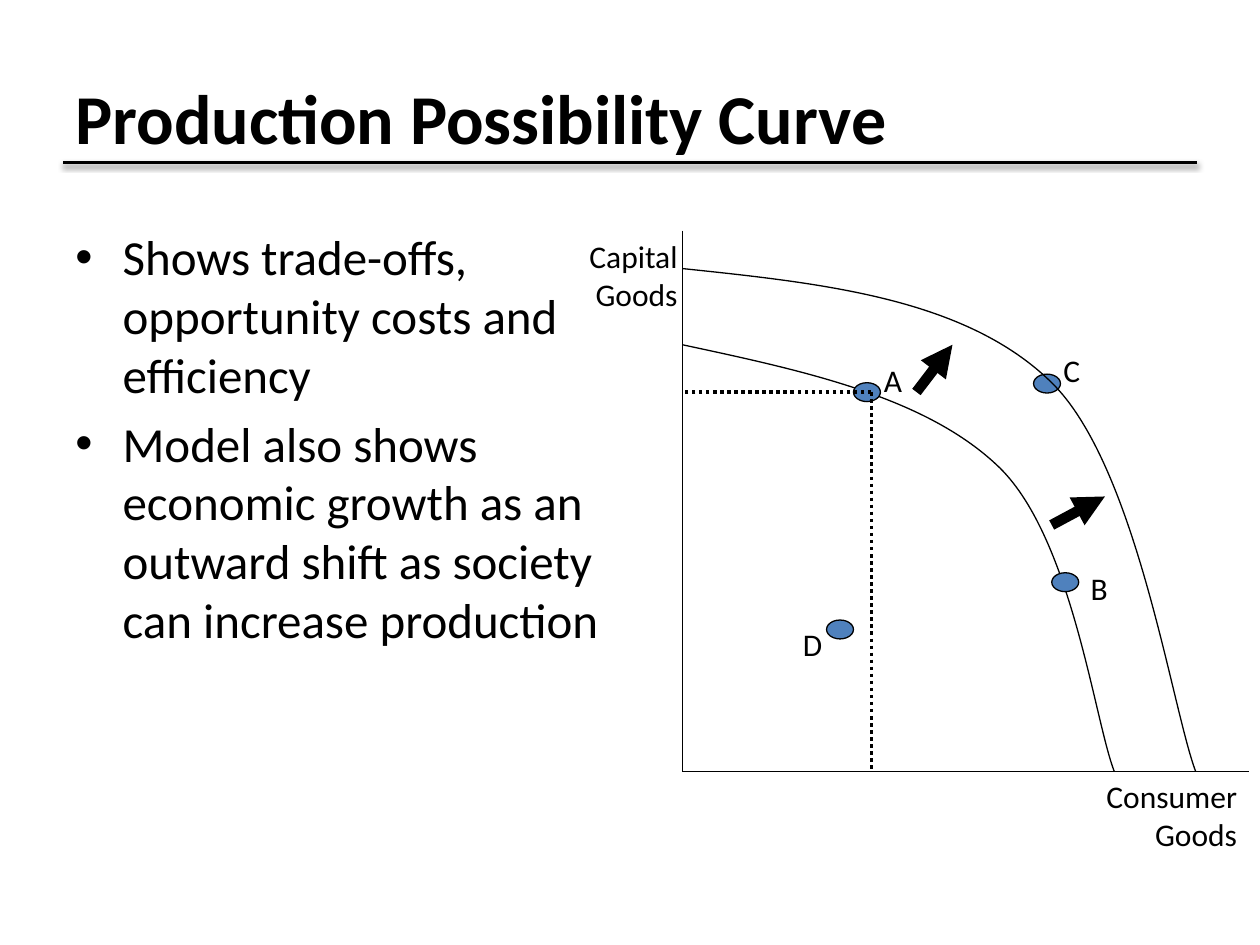
from lxml.etree import SubElement
from pptx import Presentation
from pptx.dml.color import RGBColor
from pptx.enum.dml import MSO_LINE
from pptx.enum.shapes import MSO_CONNECTOR, MSO_SHAPE
from pptx.enum.text import MSO_ANCHOR, PP_ALIGN
from pptx.oxml.ns import qn
from pptx.util import Pt

BLACK = RGBColor(0x00, 0x00, 0x00)
BLUE = RGBColor(0x4F, 0x81, 0xBD)
FONT = "Calibri"

TITLE = "Production Possibility Curve"
BULLETS = [
    "Shows trade-offs, opportunity costs and efficiency",
    "Model also shows economic growth as an outward shift as society can increase production",
]
# Chart geometry in points
LEFT, RIGHT, TOP, BASE = 390, 714, 131.75, 440.7
POINT_A = (498, 224)
# Each curve: start, then three Bezier points for each of two pieces
INNER_CURVE = [(LEFT, 197), (460, 212), (530, 227), (571.5, 267.5),
               (612.7, 308.3), (625.5, 411.8), (636.7, BASE)]
OUTER_CURVE = [(LEFT, 153.5), (471, 162), (552, 170.6), (601, 218.7),
               (649.5, 266.4), (669.5, 404), (683.2, BASE)]
# Letter, corner of the dot, corner of its label
POINTS = [
    ("A", (487.7, 218.7), (498, 202.5)),
    ("D", (472.3, 354.3), (451.7, 353.5)),
    ("C", (590.6, 213.8), (600.5, 197.3)),
    ("B", (601, 327.3), (616.2, 321.8)),
]
DOT_SIZE = (15.4, 10.8)
LABEL_SIZE = (26, 27)
AXIS_TITLES = [
    ("Capital Goods", (312.2, TOP, 82, 51)),
    ("Consumer Goods", (612, BASE, 102, 51)),
]
SHIFTS = [((523.7, 224), (544.3, 197)), ((601, 300), (631.4, 283.7))]


def add_text(page, area, lines, size, bold=False, align=PP_ALIGN.LEFT,
             anchor=MSO_ANCHOR.TOP, bulleted=False):
    box = page.shapes.add_textbox(*map(Pt, area))
    frame = box.text_frame
    frame.word_wrap = True
    frame.vertical_anchor = anchor
    for index, line in enumerate(lines):
        para = frame.paragraphs[0] if index == 0 else frame.add_paragraph()
        para.alignment = align
        if index:
            para.space_before = Pt(size * 0.2)
        if bulleted:
            properties = para._p.get_or_add_pPr()
            properties.set("marL", str(Pt(27)))
            properties.set("indent", str(Pt(-27)))
            SubElement(properties, qn("a:buFont"), typeface="Arial")
            SubElement(properties, qn("a:buChar"), char="•")
        span = para.add_run()
        span.text = line
        span.font.name = FONT
        span.font.size = Pt(size)
        span.font.bold = bold
        span.font.color.rgb = BLACK


def add_line(page, start, end, width, dash=None, arrow=False):
    """Draw a straight line without shadow and return its empty effect list."""
    line = page.shapes.add_connector(MSO_CONNECTOR.STRAIGHT, *map(Pt, start + end))
    line.line.color.rgb = BLACK
    line.line.width = Pt(width)
    if dash:
        line.line.dash_style = dash
    if arrow:
        SubElement(line.line._get_or_add_ln(), qn("a:tailEnd"), type="triangle")
    return SubElement(line._element.spPr, qn("a:effectLst"))


def add_rule_shadow(effects):
    shadow = SubElement(effects, qn("a:outerShdw"), blurRad=str(Pt(3.1)),
                        dist=str(Pt(1.6)), dir="5400000", rotWithShape="0")
    color = SubElement(shadow, qn("a:srgbClr"), val=str(BLACK))
    SubElement(color, qn("a:alpha"), val="38000")


def add_curve(page, controls):
    """Lay out the control points as a polyline, then join each three into a Bezier."""
    start, *rest = [tuple(map(Pt, control)) for control in controls]
    builder = page.shapes.build_freeform(*start)
    builder.add_line_segments(rest, close=False)
    curve = builder.convert_to_shape()
    outline = next(curve._element.iter(qn("a:path")))
    segments = outline.findall(qn("a:lnTo"))
    for first in range(0, len(segments), 3):
        bezier = SubElement(outline, qn("a:cubicBezTo"))
        for segment in segments[first:first + 3]:
            bezier.append(segment[0])
            outline.remove(segment)
    curve.shadow.inherit = False
    curve.fill.background()
    curve.line.color.rgb = BLACK
    curve.line.width = Pt(0.75)


def add_dot(page, corner):
    dot = page.shapes.add_shape(MSO_SHAPE.OVAL, *map(Pt, corner + DOT_SIZE))
    dot.shadow.inherit = False
    dot.fill.solid()
    dot.fill.fore_color.rgb = BLUE
    dot.line.color.rgb = BLACK
    dot.line.width = Pt(0.75)


def main():
    deck = Presentation()
    deck.slide_width, deck.slide_height = Pt(720), Pt(540)
    page = deck.slides.add_slide(deck.slide_layouts[6])

    add_rule_shadow(add_line(page, (36, 93), (684, 93), 2))
    add_text(page, (36, 21.6, 648, 90), [TITLE], 40, bold=True,
             anchor=MSO_ANCHOR.MIDDLE)
    add_text(page, (36, 126, 318.2, 356.4), BULLETS, 28, bulleted=True)

    origin = (LEFT, BASE)
    add_line(page, (LEFT, TOP), origin, 0.75)
    add_line(page, origin, (RIGHT, BASE), 0.75)
    add_curve(page, INNER_CURVE)
    for letter, dot_corner, label_corner in POINTS:
        add_dot(page, dot_corner)
        add_text(page, label_corner + LABEL_SIZE, [letter], 18)
    for title, area in AXIS_TITLES:
        add_text(page, area, [title], 18, align=PP_ALIGN.RIGHT)
    for foot in ((POINT_A[0], BASE), (LEFT, POINT_A[1])):
        add_line(page, POINT_A, foot, 2, dash=MSO_LINE.ROUND_DOT)
    add_curve(page, OUTER_CURVE)
    for start, end in SHIFTS:
        add_line(page, start, end, 6, arrow=True)

    deck.save("out.pptx")


if __name__ == "__main__":
    main()
